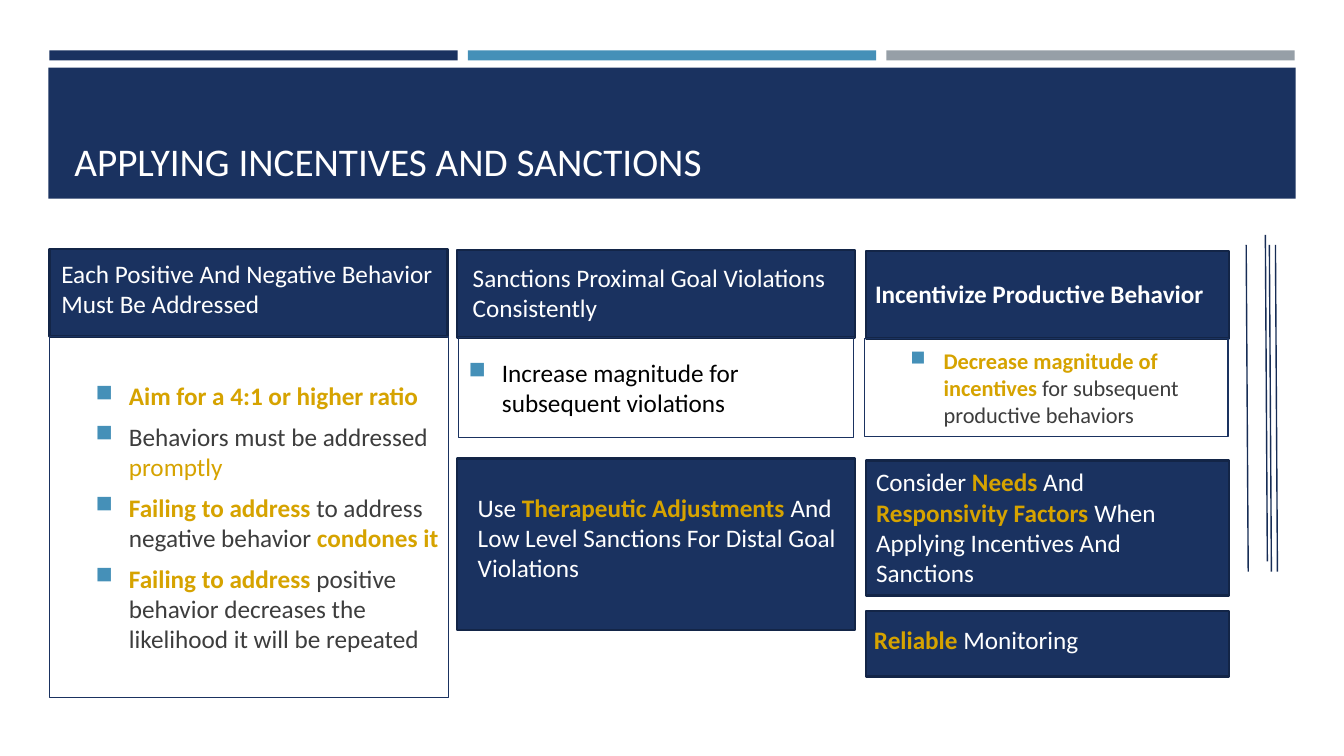
import pptx
import pptx.util
import pptx.dml.color
import pptx.enum.shapes
import pptx.enum.text
import pptx.oxml.ns
from lxml import etree

COLORS = {
    "navy": "1A3260", "edge": "132547", "rule": "172D56", "blue": "4590B8",
    "gray": "969FA7", "gold": "D6A300", "white": "FFFFFF", "dark": "3D3D3D",
    "black": "000000",
}
FONT = "Calibri"
PX = 9144  # 100 px to the inch
SLIDE = (1333, 750)

TITLE = "APPLYING INCENTIVES AND SANCTIONS"
TITLE_BAND = (48, 67, 1237, 130)
TITLE_BOX = (64, 77, 1206, 111)

STRIPE_LEFT, STRIPE_TOP, STRIPE_WIDTH, STRIPE_HEIGHT, STRIPE_STEP = 49, 50, 405, 10, 415
STRIPES = ["navy", "blue", "gray"]

# Panel rectangle, text rectangle, runs; a run is (text, color, bold)
PANELS = [
    ((49, 247, 395, 87), (51, 243, 398, 86),
     [("Each Positive And Negative Behavior Must Be Addressed", "white", False)]),
    ((453, 248, 395, 87), (459, 247, 398, 86),
     [("Sanctions Proximal Goal Violations Consistently", "white", False)]),
    ((859, 249, 360, 87), (858, 247, 372, 89),
     [("Incentivize Productive Behavior", "white", True)]),
    ((453, 455, 395, 170), (464, 457, 384, 152),
     [("Use ", "white", False), ("Therapeutic Adjustments ", "gold", True),
      ("And Low Level Sanctions For Distal Goal Violations", "white", False)]),
    ((859, 457, 360, 134), (859, 455, 361, 136),
     [("Consider ", "white", False), ("Needs ", "gold", True), ("And ", "white", False),
      ("Responsivity Factors ", "gold", True),
      ("When Applying Incentives And Sanctions", "white", False)]),
    ((859, 606, 360, 65), (857, 609, 363, 51),
     [("Reliable ", "gold", True), ("Monitoring", "white", False)]),
]

# Rectangle, left indent, font size, space after, bulleted paragraphs
LISTS = [
    ((49, 334, 396, 358), 69, 18, 3.8, [
        [("Aim for a 4:1 or higher ratio", "gold", True)],
        [("Behaviors must be addressed ", "dark", False), ("promptly", "gold", False)],
        [("Failing to address ", "gold", True),
         ("to address negative behavior ", "dark", False), ("condones it", "gold", True)],
        [("Failing to address ", "gold", True),
         ("positive behavior decreases the likelihood it will be repeated", "dark", False)],
    ]),
    ((455, 335, 392, 99), 33, 18, 6, [
        [("Increase magnitude for subsequent violations", "black", False)],
    ]),
    ((857, 336, 361, 97), 69, 16, 6, [
        [("Decrease magnitude of incentives ", "gold", True),
         ("for subsequent productive behaviors", "dark", False)],
    ]),
]
HANGING = 33

RULE_STARTS = [(1236, 243), (1255, 233), (1259, 243), (1265, 243)]
RULE_LEAN, RULE_LENGTH = 2, 324


def emu(lengths):
    return [length * PX for length in lengths]


def rgb(name):
    return pptx.dml.color.RGBColor.from_string(COLORS[name])


def add_rect(page, place, fill=None, line=None, line_width=0.75):
    rect = page.shapes.add_shape(pptx.enum.shapes.MSO_SHAPE.RECTANGLE, *emu(place))
    rect.shadow.inherit = False
    if fill:
        rect.fill.solid()
        rect.fill.fore_color.rgb = rgb(fill)
    else:
        rect.fill.background()
    if line:
        rect.line.color.rgb = rgb(line)
        rect.line.width = pptx.util.Pt(line_width)
    else:
        rect.line.fill.background()
    return rect


def write(shape, paragraphs, size, after=6, anchor=pptx.enum.text.MSO_ANCHOR.MIDDLE):
    frame = shape.text_frame
    frame.word_wrap = True
    frame.vertical_anchor = anchor
    for index, runs in enumerate(paragraphs):
        para = frame.add_paragraph() if index else frame.paragraphs[0]
        para.alignment = pptx.enum.text.PP_ALIGN.LEFT
        para.space_before = pptx.util.Pt(size * 0.2)
        para.space_after = pptx.util.Pt(after)
        for text, color, bold in runs:
            span = para.add_run()
            span.text = text
            span.font.name = FONT
            span.font.size = pptx.util.Pt(size)
            span.font.bold = bold
            span.font.color.rgb = rgb(color)


def add_bullet(para, indent):
    props = para._p.get_or_add_pPr()
    props.set("marL", str(indent * PX))
    props.set("indent", str(-HANGING * PX))
    qn = pptx.oxml.ns.qn
    color = etree.SubElement(props, qn("a:buClr"))
    etree.SubElement(color, qn("a:srgbClr"), val=COLORS["blue"])
    etree.SubElement(props, qn("a:buSzPct"), val="92000")
    etree.SubElement(props, qn("a:buChar"), char="■")


def add_rule(page, left, top):
    rule = page.shapes.add_connector(
        pptx.enum.shapes.MSO_CONNECTOR.STRAIGHT,
        *emu((left, top, left + RULE_LEAN, top + RULE_LENGTH)))
    rule.line.color.rgb = rgb("rule")
    rule.line.width = pptx.util.Pt(1)
    etree.SubElement(rule._element.spPr, pptx.oxml.ns.qn("a:effectLst"))


def main():
    deck = pptx.Presentation()
    deck.slide_width, deck.slide_height = emu(SLIDE)
    page = deck.slides.add_slide(deck.slide_layouts[6])

    for index, color in enumerate(STRIPES):
        left = STRIPE_LEFT + index * STRIPE_STEP
        add_rect(page, (left, STRIPE_TOP, STRIPE_WIDTH, STRIPE_HEIGHT), color)
    add_rect(page, TITLE_BAND, "navy")
    title = page.shapes.add_textbox(*emu(TITLE_BOX))
    write(title, [[(TITLE, "white", False)]], 28, 0, pptx.enum.text.MSO_ANCHOR.BOTTOM)

    for place, text_place, runs in PANELS:
        add_rect(page, place, "navy", "edge", 1.75)
        write(page.shapes.add_textbox(*emu(text_place)), [runs], 18)

    for place, indent, size, after, paragraphs in LISTS:
        box = add_rect(page, place, line="navy")
        write(box, paragraphs, size, after)
        for para in box.text_frame.paragraphs:
            add_bullet(para, indent)

    for left, top in RULE_STARTS:
        add_rule(page, left, top)

    deck.save("out.pptx")


if __name__ == "__main__":
    main()
